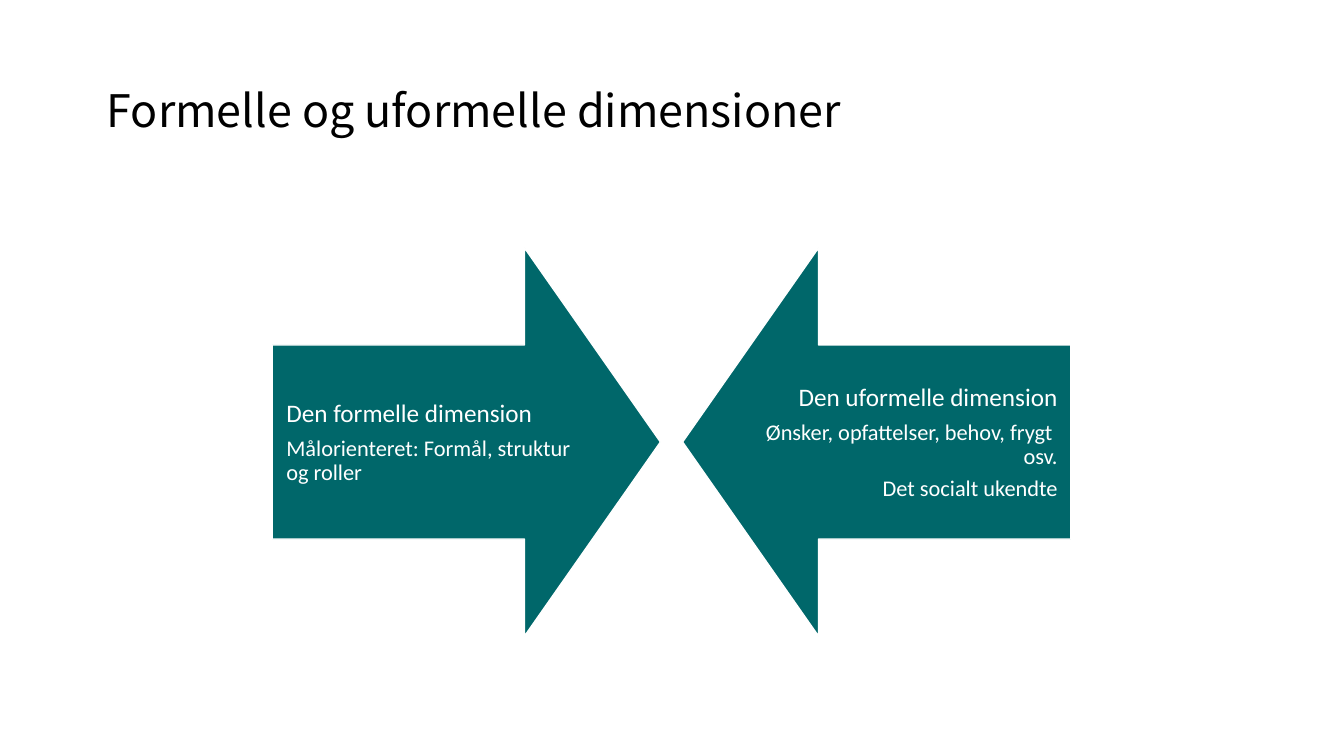
from pptx import Presentation
from pptx.dml.color import RGBColor as RGB
from pptx.enum.shapes import MSO_SHAPE as Shape
from pptx.enum.text import MSO_ANCHOR as Anchor, MSO_AUTO_SIZE as Fit, PP_ALIGN as Align
from pptx.util import Pt

PX = 9144
HUES = {"teal": "00676A", "white": "FFFFFF", "black": "000000"}


def write(box, lines, font, hue, align=Align.LEFT, inset=10, top=5, after=0):
    frame = box.text_frame
    frame.word_wrap = True
    frame.auto_size = Fit.NONE
    frame.vertical_anchor = Anchor.MIDDLE
    frame.margin_left = frame.margin_right = inset * PX
    frame.margin_top = frame.margin_bottom = top * PX
    for i, (text, size) in enumerate(lines):
        para = frame.add_paragraph() if i else frame.paragraphs[0]
        para.alignment = align
        para.line_spacing = 0.9
        para.space_before = Pt(0)
        para.space_after = Pt(size * after)
        run = para.add_run()
        run.text = text
        run.font.name = font
        run.font.size = Pt(size)
        run.font.color.rgb = RGB.from_string(HUES[hue])


deck = Presentation()
deck.slide_width, deck.slide_height = 1333 * PX, 750 * PX
slide = deck.slides.add_slide(deck.slide_layouts[5])

title = slide.shapes.title
title.left, title.top, title.width, title.height = 96 * PX, 40 * PX, 1142 * PX, 145 * PX
write(title, [("Formelle og uformelle dimensioner", 32)], "Noto Sans CJK JP", "black")

sides = [
    (270, 270, 270, Align.LEFT, [
        ("Den formelle dimension", 18),
        ("Målorienteret: Formål, struktur og roller", 16),
    ]),
    (677, 90, 745, Align.RIGHT, [
        ("Den uformelle dimension", 18),
        ("Ønsker, opfattelser, behov, frygt  osv.", 16),
        ("Det socialt ukendte", 16),
    ]),
]

for left, turn, edge, align, lines in sides:
    arrow = slide.shapes.add_shape(Shape.DOWN_ARROW, left * PX, 246 * PX, 385 * PX, 385 * PX)
    arrow.rotation = turn
    arrow.adjustments[0] = 0.5
    arrow.adjustments[1] = 0.35
    arrow.shadow.inherit = False
    arrow.fill.solid()
    arrow.fill.fore_color.rgb = RGB.from_string(HUES["teal"])
    arrow.line.color.rgb = RGB.from_string(HUES["white"])
    arrow.line.width = Pt(1)
    label = slide.shapes.add_textbox(edge * PX, 343 * PX, 318 * PX, 193 * PX)
    write(label, lines, "Calibri", "white", align=align, inset=14, top=14, after=0.35)

deck.save("out.pptx")
